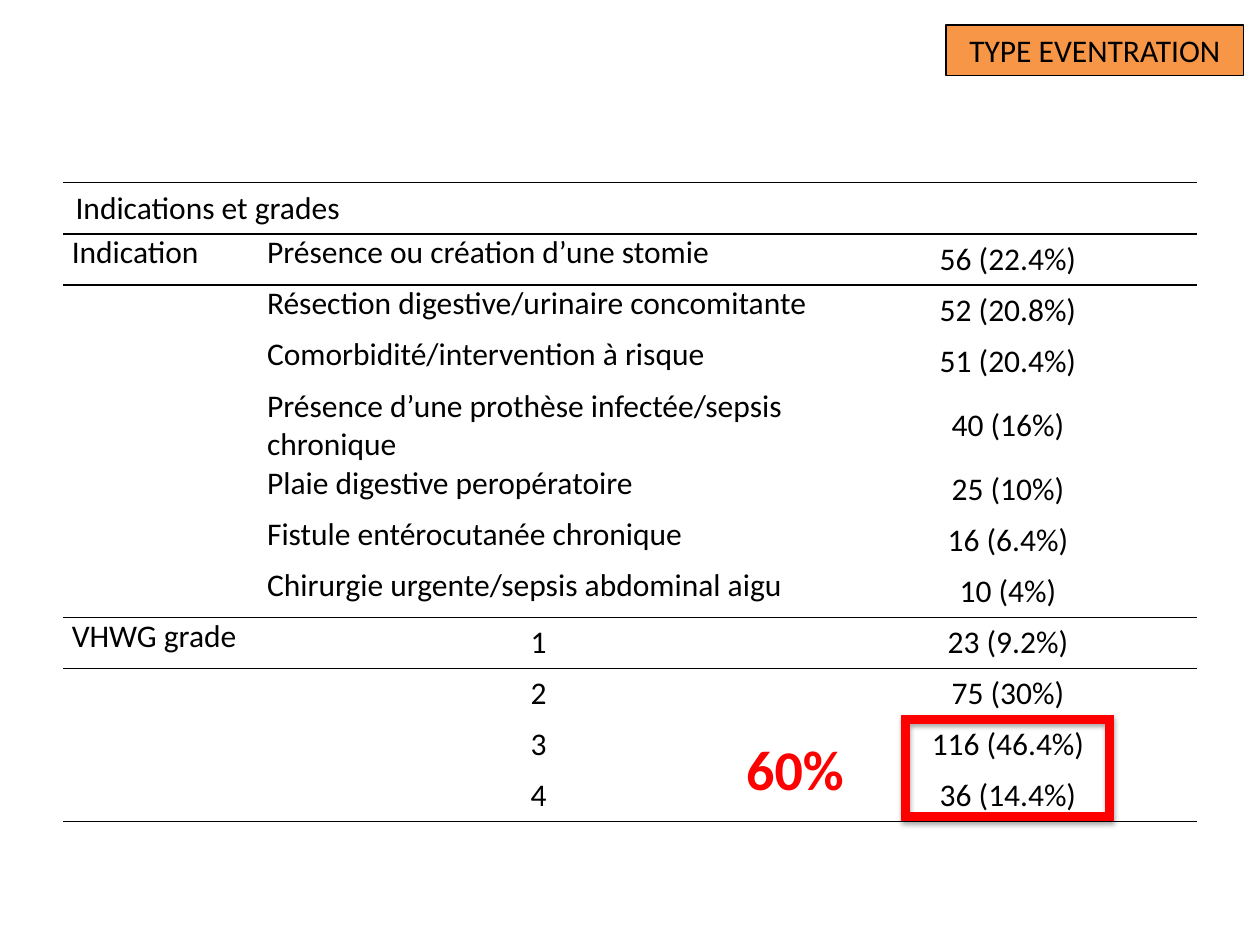
import lxml.etree
import pptx
import pptx.dml.color
import pptx.enum.shapes
import pptx.enum.text
import pptx.oxml.ns
import pptx.util
from pptx.util import Inches

BLACK = pptx.dml.color.RGBColor(0x00, 0x00, 0x00)
RED = pptx.dml.color.RGBColor(0xFF, 0x00, 0x00)
ORANGE = pptx.dml.color.RGBColor(0xF7, 0x96, 0x46)
FONT = "Calibri"
NO_GRID_STYLE = "{2D5ABB26-0587-4C30-8999-92F81FD0307C}"
CENTER = pptx.enum.text.PP_ALIGN.CENTER
LEFT = pptx.enum.text.PP_ALIGN.LEFT
MIDDLE = pptx.enum.text.MSO_ANCHOR.MIDDLE
TOP = pptx.enum.text.MSO_ANCHOR.TOP

HEADING = "Indications et grades"
INDICATIONS = [
    ("Présence ou création d’une stomie", "56 (22.4%)"),
    ("Résection digestive/urinaire concomitante", "52 (20.8%)"),
    ("Comorbidité/intervention à risque", "51 (20.4%)"),
    ("Présence d’une prothèse infectée/sepsis chronique", "40 (16%)"),
    ("Plaie digestive peropératoire", "25 (10%)"),
    ("Fistule entérocutanée chronique", "16 (6.4%)"),
    ("Chirurgie urgente/sepsis abdominal aigu", "10 (4%)"),
]
GRADES = [
    ("1", "23 (9.2%)"),
    ("2", "75 (30%)"),
    ("3", "116 (46.4%)"),
    ("4", "36 (14.4%)"),
]


def add_element(parent, tag, **attributes):
    return lxml.etree.SubElement(parent, pptx.oxml.ns.qn(tag), **attributes)


def write_text(frame, text, align=CENTER, size=18, color=BLACK, bold=False):
    frame.text = text
    para = frame.paragraphs[0]
    para.alignment = align
    for font in [para.font] + [span.font for span in para.runs]:
        font.name = FONT
        font.size = pptx.util.Pt(size)
        font.color.rgb = color
        font.bold = bold


def add_rules(cell, tags):
    """Draw 1 pt black borders; they must come before the fill in the cell."""
    properties = cell._tc.get_or_add_tcPr()
    for position, tag in enumerate(tags):
        line = add_element(properties, tag, w=str(pptx.util.Pt(1)))
        fill = add_element(line, "a:solidFill")
        add_element(fill, "a:srgbClr", val=str(BLACK))
        properties.insert(position, line)


def write_cell(cell, text, align, anchor):
    cell.margin_left = cell.margin_right = Inches(0.07)
    cell.margin_top = cell.margin_bottom = 0
    cell.vertical_anchor = anchor
    write_text(cell.text_frame, text, align)


def add_group(table, first_row, label, entries, align, anchor):
    """Fill the rows of one group, with a rule above and below it."""
    last_row = first_row + len(entries) - 1
    for row, (name, count) in enumerate(entries, first_row):
        write_cell(table.cell(row, 0), label if row == first_row else "", LEFT, TOP)
        write_cell(table.cell(row, 1), name, align, anchor)
        write_cell(table.cell(row, 2), count, CENTER, MIDDLE)
    for column in range(3):
        add_rules(table.cell(first_row, column), ["a:lnT"])
        add_rules(table.cell(last_row, column), ["a:lnB"])


def add_results_table(slide):
    row_count = 1 + len(INDICATIONS) + len(GRADES)
    table = slide.shapes.add_table(
        row_count, 3, Inches(0.5), Inches(1.45), Inches(9), Inches(4.87)
    ).table
    table.first_row = table.horz_banding = False
    table._tbl.tblPr.find(pptx.oxml.ns.qn("a:tableStyleId")).text = NO_GRID_STYLE
    for column, width in zip(table.columns, (1.55, 4.45, 3)):
        column.width = Inches(width)
    for cell in table.iter_cells():
        cell.fill.background()

    heading = table.cell(0, 0)
    heading.merge(table.cell(0, 2))
    write_text(heading.text_frame, HEADING, LEFT)
    for column in range(3):
        add_rules(table.cell(0, column), ["a:lnT", "a:lnB"])
    add_group(table, 1, "Indication", INDICATIONS, LEFT, TOP)
    add_group(table, 1 + len(INDICATIONS), "VHWG grade", GRADES, CENTER, MIDDLE)


def add_filled_shape(slide, kind, left, top, width, height, fill, line, line_width):
    shape = slide.shapes.add_shape(
        kind, Inches(left), Inches(top), Inches(width), Inches(height)
    )
    shape.shadow.inherit = False
    shape.fill.solid()
    shape.fill.fore_color.rgb = fill
    shape.line.color.rgb = line
    shape.line.width = pptx.util.Pt(line_width)
    return shape


def add_soft_shadow(shape):
    effects = shape._element.spPr.find(pptx.oxml.ns.qn("a:effectLst"))
    shadow = add_element(
        effects, "a:outerShdw", blurRad=str(pptx.util.Pt(3.1)),
        dist=str(pptx.util.Pt(1.8)), dir="5400000", rotWithShape="0",
    )
    color = add_element(shadow, "a:srgbClr", val=str(BLACK))
    add_element(color, "a:alpha", val="35000")


def add_highlight(slide):
    """Frame the counts of grades 3 and 4 and state their total share."""
    frame = add_filled_shape(
        slide, pptx.enum.shapes.MSO_SHAPE.FRAME, 7.16, 5.68, 1.68, 0.83, RED, RED, 0.75
    )
    frame.adjustments[0] = 0.074
    add_soft_shadow(frame)
    box = slide.shapes.add_textbox(Inches(5.7), Inches(5.78), Inches(1.22), Inches(0.64))
    box.text_frame.word_wrap = True
    write_text(box.text_frame, "60%", size=32, color=RED, bold=True)


def main():
    deck = pptx.Presentation()
    deck.slide_width = Inches(10)
    deck.slide_height = Inches(7.5)
    slide = deck.slides.add_slide(deck.slide_layouts.get_by_name("Blank"))
    add_results_table(slide)
    tag = add_filled_shape(
        slide, pptx.enum.shapes.MSO_SHAPE.RECTANGLE, 7.51, 0.2, 2.36, 0.4, ORANGE, BLACK, 1
    )
    write_text(tag.text_frame, "TYPE EVENTRATION")
    add_highlight(slide)
    deck.save("out.pptx")


if __name__ == "__main__":
    main()
